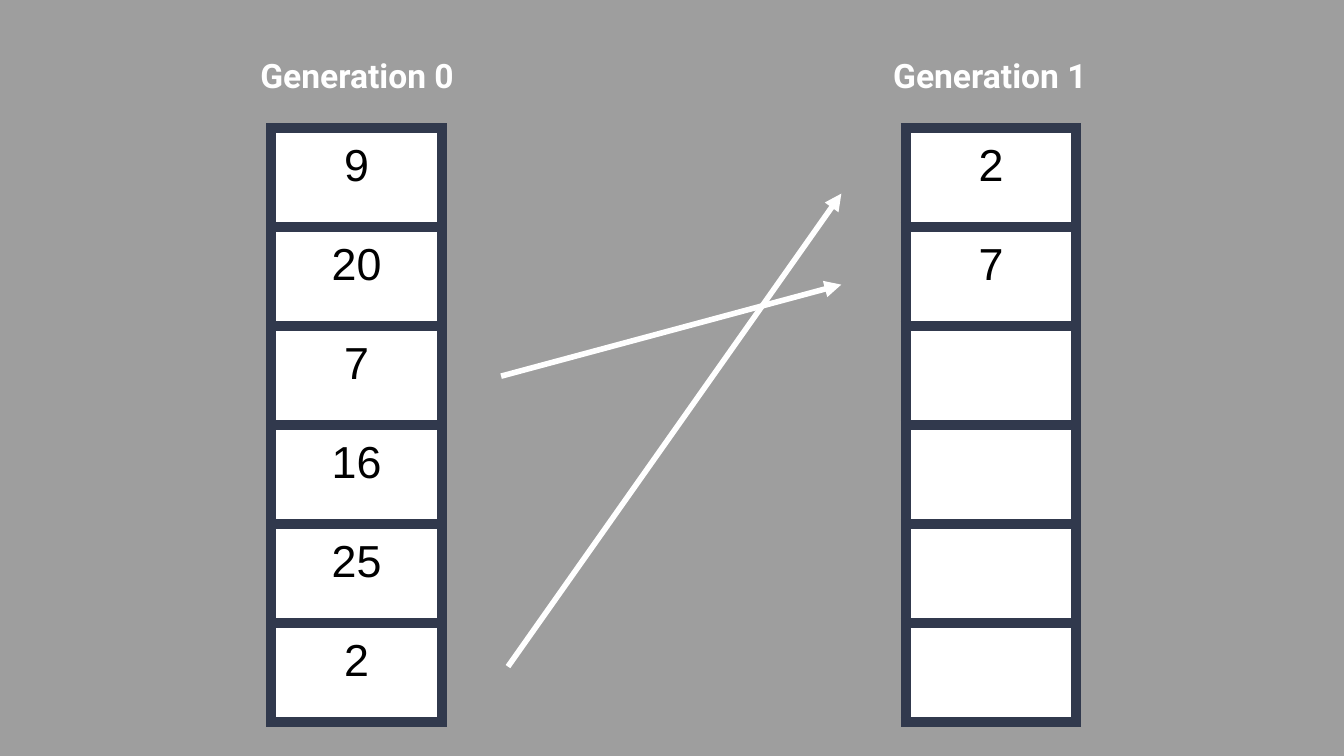
import pptx
import pptx.util
import pptx.dml.color
import pptx.enum.shapes
import pptx.enum.text
import pptx.oxml
import pptx.oxml.ns
from lxml import etree

Cm, Pt = pptx.util.Cm, pptx.util.Pt
RGB = pptx.dml.color.RGBColor.from_string
qn = pptx.oxml.ns.qn
CENTER = pptx.enum.text.PP_ALIGN.CENTER

THEME = {
    "background": "9E9E9E", "border": "31394D", "cell": "FFFFFF",
    "value": "000000", "light": "FFFFFF",
    "value_font": "Arial", "value_size": 24,
    "heading_font": "Roboto", "heading_size": 18,
    "border_width": 6, "arrow_width": 3,
}
INSET = Cm(0.25)
ROWS, ROW_HEIGHT, COL_WIDTH = 6, 1.87, 3.22


def style_text(p, font, size, color, bold=False):
    p.alignment = CENTER
    p.font.name = font
    p.font.size = Pt(size)
    p.font.bold = bold
    p.font.color.rgb = RGB(color)


def add_borders(cell):
    tcPr = cell._tc.get_or_add_tcPr()
    for i, side in enumerate(("lnL", "lnR", "lnT", "lnB")):
        tcPr.insert(i, pptx.oxml.parse_xml(
            f'<a:{side} {pptx.oxml.ns.nsdecls("a")} w="{Pt(THEME["border_width"])}">'
            f'<a:solidFill><a:srgbClr val="{THEME["border"]}"/></a:solidFill></a:{side}>'))


prs = pptx.Presentation()
prs.slide_width, prs.slide_height = Cm(25.4), Cm(14.29)
s = prs.slides.add_slide(prs.slide_layouts[6])
s.background.fill.solid()
s.background.fill.fore_color.rgb = RGB(THEME["background"])

# Generations: a heading above a column of values
generations = [
    ("Generation 0", 5.13, 4.5, [9, 20, 7, 16, 25, 2]),
    ("Generation 1", 17.12, 16.46, [2, 7]),
]
for heading, table_left, heading_left, values in generations:
    table = s.shapes.add_table(ROWS, 1, Cm(table_left), Cm(2.42),
                               Cm(COL_WIDTH), Cm(ROWS * ROW_HEIGHT)).table
    table.first_row = table.horz_banding = False
    for i in range(ROWS):
        cell = table.cell(i, 0)
        cell.margin_left = cell.margin_right = INSET
        cell.margin_top = cell.margin_bottom = INSET
        cell.fill.solid()
        cell.fill.fore_color.rgb = RGB(THEME["cell"])
        add_borders(cell)
        if i < len(values):
            cell.text = str(values[i])
            style_text(cell.text_frame.paragraphs[0], THEME["value_font"],
                       THEME["value_size"], THEME["value"])

    tf = s.shapes.add_textbox(Cm(heading_left), Cm(0.79), Cm(4.5), Cm(1.27)).text_frame
    tf.word_wrap = True
    tf.margin_left = tf.margin_right = tf.margin_top = tf.margin_bottom = INSET
    p = tf.paragraphs[0]
    p.text = heading
    style_text(p, THEME["heading_font"], THEME["heading_size"], THEME["light"], bold=True)

# Arrows from the selected values to their new places
for x1, y1, x2, y2 in [(9.6, 12.6, 15.9, 3.66), (9.47, 7.11, 15.9, 5.38)]:
    arrow = s.shapes.add_connector(pptx.enum.shapes.MSO_CONNECTOR.STRAIGHT,
                                   Cm(x1), Cm(y1), Cm(x2), Cm(y2))
    arrow.line.color.rgb = RGB(THEME["light"])
    arrow.line.width = Pt(THEME["arrow_width"])
    etree.SubElement(arrow.line._get_or_add_ln(), qn("a:tailEnd"), type="triangle")
    etree.SubElement(arrow._element.spPr, qn("a:effectLst"))

prs.save("out.pptx")
